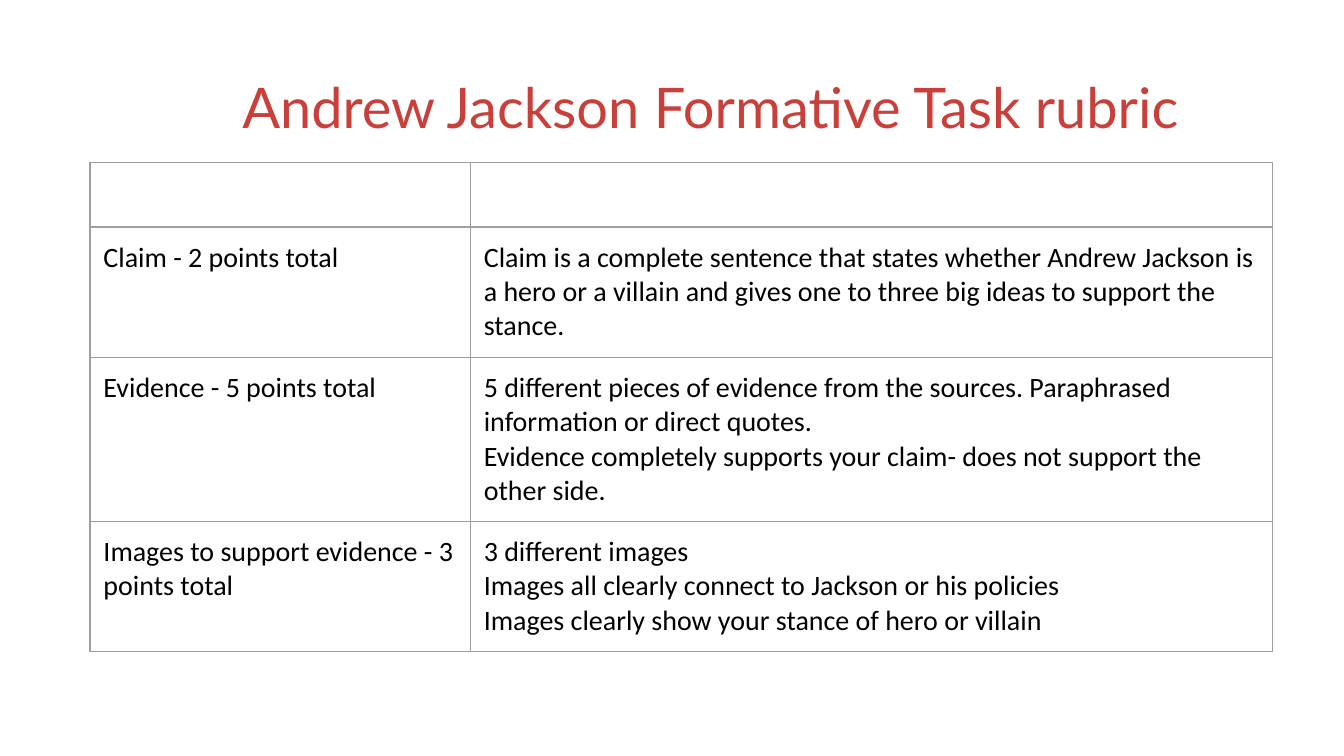
from lxml import etree
from pptx import Presentation
from pptx.dml.color import RGBColor
from pptx.enum.text import MSO_ANCHOR, MSO_AUTO_SIZE, PP_ALIGN
from pptx.oxml.ns import qn
from pptx.util import Inches, Pt

BOTTOM = MSO_ANCHOR.BOTTOM
NO_FIT = MSO_AUTO_SIZE.NONE
LEFT, RIGHT = PP_ALIGN.LEFT, PP_ALIGN.RIGHT

COLORS = {"title": "C9403B", "text": "000000", "border": "9E9E9E"}
TITLE_ONLY = 5
COLUMN_WIDTHS = [2.83, 5.97]
ROW_HEIGHTS = [0.48, 0.97, 1.22, 0.96]

# Each row: criterion, then the expectations, one paragraph each
RUBRIC = [
    ([], []),
    (["Claim - 2 points total"],
     ["Claim is a complete sentence that states whether Andrew Jackson is a hero "
      "or a villain and gives one to three big ideas to support the stance."]),
    (["Evidence - 5 points total"],
     ["5 different pieces of evidence from the sources. Paraphrased information "
      "or direct quotes.",
      "Evidence completely supports your claim- does not support the other side."]),
    (["Images to support evidence - 3 points total"],
     ["3 different images",
      "Images all clearly connect to Jackson or his policies",
      "Images clearly show your stance of hero or villain"]),
]


class RubricSlide:
    """Holds the style and the current slide."""

    def __init__(self, deck):
        self.slide = deck.slides.add_slide(deck.slide_layouts[TITLE_ONLY])
        self.inset = Inches(0.1)

    def set_margins(self, holder):
        holder.margin_left = holder.margin_right = self.inset
        holder.margin_top = holder.margin_bottom = self.inset

    def style(self, para, font, size, color, align):
        para.alignment = align
        para.font.name = font
        para.font.size = Pt(size)
        para.font.color.rgb = RGBColor.from_string(COLORS[color])

    def title(self, text, left, top, width, height):
        box = self.slide.shapes.title
        box.left, box.top = Inches(left), Inches(top)
        box.width, box.height = Inches(width), Inches(height)
        frame = box.text_frame
        frame.text = text
        frame.word_wrap = True
        frame.auto_size = NO_FIT
        frame.vertical_anchor = BOTTOM
        self.set_margins(frame)
        self.style(frame.paragraphs[0], "Lato", 30, "title", RIGHT)

    def borders(self, cell):
        properties = cell._tc.get_or_add_tcPr()
        for side in ("lnL", "lnR", "lnT", "lnB"):
            line = etree.SubElement(properties, qn(f"a:{side}"), w=str(Pt(0.75)))
            fill = etree.SubElement(line, qn("a:solidFill"))
            etree.SubElement(fill, qn("a:srgbClr"), val=COLORS["border"])

    def fill_cell(self, cell, lines):
        self.borders(cell)
        cell.fill.background()
        if not lines:
            return
        self.set_margins(cell)
        cell.text = "\n".join(lines)
        for para in cell.text_frame.paragraphs:
            self.style(para, "Calibri", 15, "text", LEFT)

    def table(self, rows, left, top, widths, heights):
        frame = self.slide.shapes.add_table(
            len(rows), len(widths), Inches(left), Inches(top),
            Inches(sum(widths)), Inches(sum(heights)))
        table = frame.table
        table.first_row = table.horz_banding = False
        for column, width in zip(table.columns, widths):
            column.width = Inches(width)
        for row, height, contents in zip(table.rows, heights, rows):
            row.height = Inches(height)
            for cell, lines in zip(row.cells, contents):
                self.fill_cell(cell, lines)


def main():
    # Widescreen page, 16 to 9
    deck = Presentation()
    deck.slide_width = Inches(10)
    deck.slide_height = deck.slide_width * 9 // 16
    page = RubricSlide(deck)

    # Heading
    page.title("Andrew Jackson Formative Task rubric", 0.95, 0.35, 7.92, 0.79)

    # Rubric grid
    page.table(RUBRIC, 0.67, 1.21, COLUMN_WIDTHS, ROW_HEIGHTS)

    deck.save("out.pptx")


if __name__ == "__main__":
    main()
